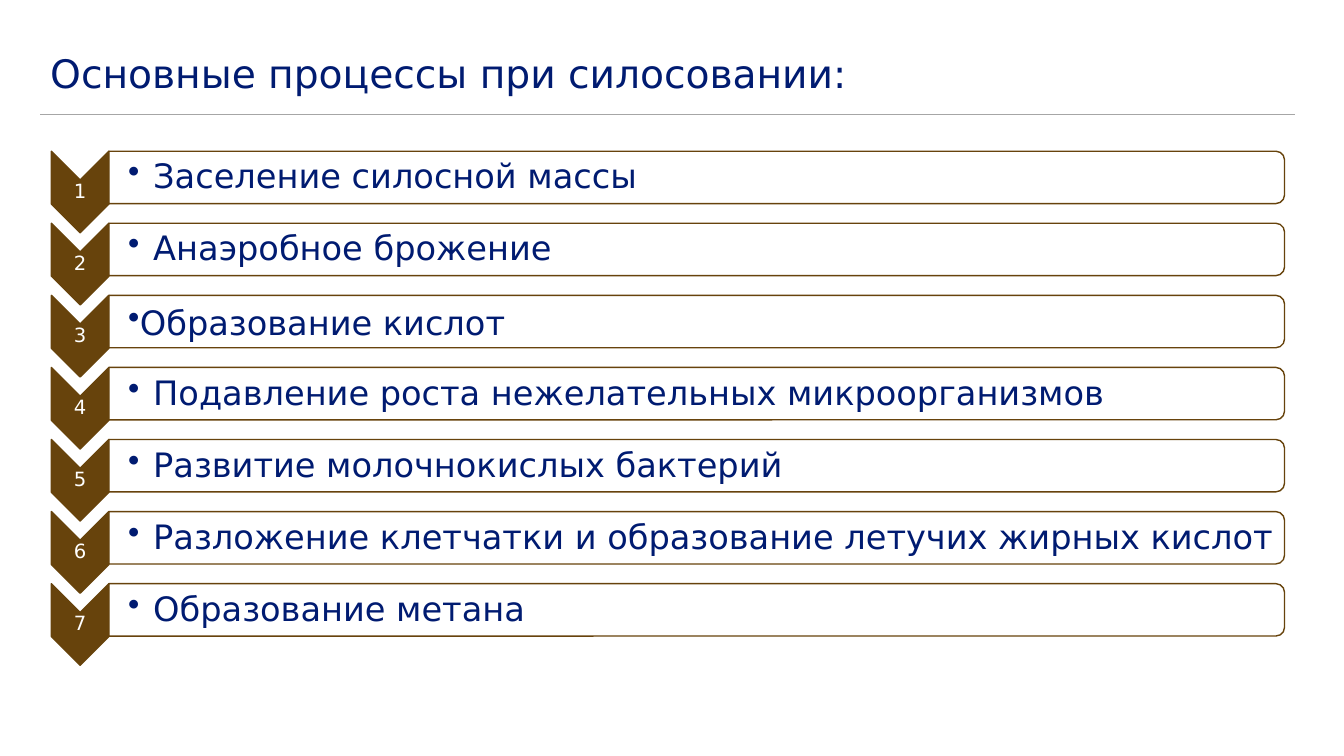
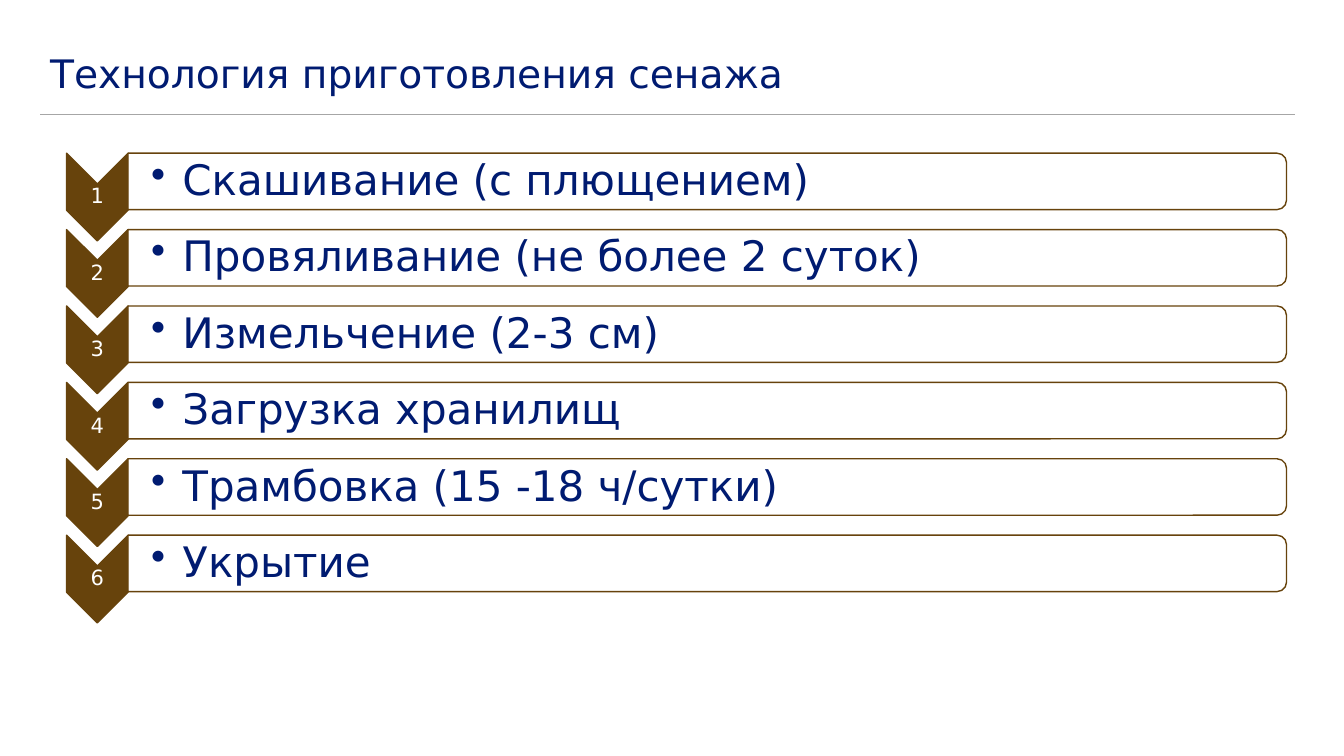
from dataclasses import dataclass

from lxml.etree import SubElement
from pptx import Presentation
from pptx.dml.color import RGBColor
from pptx.enum.shapes import MSO_CONNECTOR, MSO_SHAPE
from pptx.enum.text import MSO_ANCHOR, PP_ALIGN
from pptx.oxml.ns import qn
from pptx.shapes.autoshape import Shape
from pptx.slide import Slide
from pptx.text.text import _Paragraph as Paragraph
from pptx.util import Inches, Pt


@dataclass(frozen=True)
class Theme:
    font: str = "DejaVu Sans"
    navy: RGBColor = RGBColor(0x00, 0x1B, 0x71)
    brown: RGBColor = RGBColor(0x67, 0x43, 0x0C)
    white: RGBColor = RGBColor(0xFF, 0xFF, 0xFF)
    rule: RGBColor = RGBColor(0xA6, 0xA6, 0xA6)
    title_size: float = 28
    line_spacing: float = 0.9


THEME = Theme()


@dataclass(frozen=True)
class Box:
    left: float
    top: float
    width: float
    height: float


@dataclass(frozen=True)
class Step:
    text: str
    hanging: bool = True


@dataclass(frozen=True)
class Process:
    title: str
    steps: tuple[Step, ...]
    left: float
    top: float
    span: float
    chevron_width: float
    chevron_height: float
    bar_width: float
    bar_height: float
    number_size: float
    step_size: float
    inset: float
    indent: float


PROCESSES = (
    Process(
        title="Основные процессы при силосовании:",
        steps=(
            Step("Заселение силосной массы"),
            Step("Анаэробное брожение"),
            Step("Образование кислот", hanging=False),
            Step("Подавление роста нежелательных микроорганизмов"),
            Step("Развитие молочнокислых бактерий"),
            Step("Разложение клетчатки и образование летучих жирных кислот"),
            Step("Образование метана"),
        ),
        left=0.51, top=1.5, span=4.29,
        chevron_width=0.57, chevron_height=0.81,
        bar_width=11.66, bar_height=0.52,
        number_size=14, step_size=24, inset=0.19, indent=0.25,
    ),
    Process(
        title="Технология приготовления сенажа",
        steps=(
            Step("Скашивание (с плющением)"),
            Step("Провяливание (не более 2 суток)"),
            Step("Измельчение (2-3 см)"),
            Step("Загрузка хранилищ"),
            Step("Трамбовка (15 -18 ч/сутки)"),
            Step("Укрытие"),
        ),
        left=0.66, top=1.52, span=3.79,
        chevron_width=0.61, chevron_height=0.87,
        bar_width=11.49, bar_height=0.56,
        number_size=15, step_size=30, inset=0.23, indent=0.31,
    ),
)


def add_text(slide: Slide, box: Box, text: str, size: float, color: RGBColor,
             insets: tuple[float, float, float, float]) -> Paragraph:
    frame = slide.shapes.add_textbox(
        Inches(box.left), Inches(box.top), Inches(box.width), Inches(box.height)
    ).text_frame
    frame.word_wrap = True
    frame.vertical_anchor = MSO_ANCHOR.MIDDLE
    (frame.margin_left, frame.margin_top,
     frame.margin_right, frame.margin_bottom) = map(Inches, insets)
    paragraph = frame.paragraphs[0]
    paragraph.text = text
    paragraph.line_spacing = THEME.line_spacing
    paragraph.font.name = THEME.font
    paragraph.font.size = Pt(size)
    paragraph.font.color.rgb = color
    return paragraph


def add_turned_shape(slide: Slide, kind: MSO_SHAPE, box: Box, fill: RGBColor) -> Shape:
    shape = slide.shapes.add_shape(
        kind,
        Inches(box.left + (box.width - box.height) / 2),
        Inches(box.top + (box.height - box.width) / 2),
        Inches(box.height),
        Inches(box.width),
    )
    shape.rotation = 90
    shape.shadow.inherit = False
    shape.fill.solid()
    shape.fill.fore_color.rgb = fill
    shape.line.color.rgb = THEME.brown
    shape.line.width = Pt(1)
    return shape


def add_bullet(paragraph: Paragraph, indent: float) -> None:
    properties = paragraph._p.get_or_add_pPr()
    properties.set("marL", str(Inches(indent)))
    properties.set("indent", str(-Inches(indent)))
    bullet = properties.makeelement(qn("a:buChar"), {"char": "•"})
    defaults = properties.find(qn("a:defRPr"))
    if defaults is None:
        properties.append(bullet)
    else:
        defaults.addprevious(bullet)


def add_heading(slide: Slide, title: str) -> None:
    rule = slide.shapes.add_connector(
        MSO_CONNECTOR.STRAIGHT, Inches(0.4), Inches(1.14), Inches(12.84), Inches(1.14)
    )
    rule.line.color.rgb = THEME.rule
    rule.line.width = Pt(0.75)
    SubElement(rule._element.spPr, qn("a:effectLst"))
    add_text(slide, Box(0.4, 0.45, 12.44, 0.6), title, THEME.title_size,
             THEME.navy, (0.1, 0.05, 0.1, 0.05))


def add_step(slide: Slide, process: Process, index: int, step: Step) -> None:
    top = process.top + index * process.span / (len(process.steps) - 1)
    width, height = process.chevron_width, process.chevron_height
    add_turned_shape(slide, MSO_SHAPE.CHEVRON,
                     Box(process.left, top, width, height), THEME.brown)
    number = add_text(slide, Box(process.left, top + width / 2, width, height - width),
                      str(index + 1), process.number_size, THEME.white, (0.01,) * 4)
    number.alignment = PP_ALIGN.CENTER
    number.space_after = Pt(0.35 * process.number_size)

    bar_left = process.left + width
    bar = add_turned_shape(slide, MSO_SHAPE.ROUND_2_SAME_RECTANGLE,
                           Box(bar_left, top, process.bar_width, process.bar_height),
                           THEME.white)
    white = bar._element.spPr.find(qn("a:solidFill"))[0]
    SubElement(white, qn("a:alpha"), val="90000")

    label = add_text(
        slide,
        Box(bar_left, top + 0.03, process.bar_width - 0.03, process.bar_height - 0.05),
        step.text, process.step_size, THEME.navy, (process.inset, 0.02, 0.02, 0.02),
    )
    if step.hanging:
        label.space_after = Pt(0.15 * process.step_size)
    else:
        label.line_spacing = 1.0
    add_bullet(label, process.indent if step.hanging else 0)


def main() -> None:
    deck = Presentation()
    deck.slide_width, deck.slide_height = Inches(13.33), Inches(7.5)
    blank = deck.slide_layouts[6]
    for process in PROCESSES:
        slide = deck.slides.add_slide(blank)
        add_heading(slide, process.title)
        for index, step in enumerate(process.steps):
            add_step(slide, process, index, step)
    deck.save("out.pptx")


if __name__ == "__main__":
    main()
